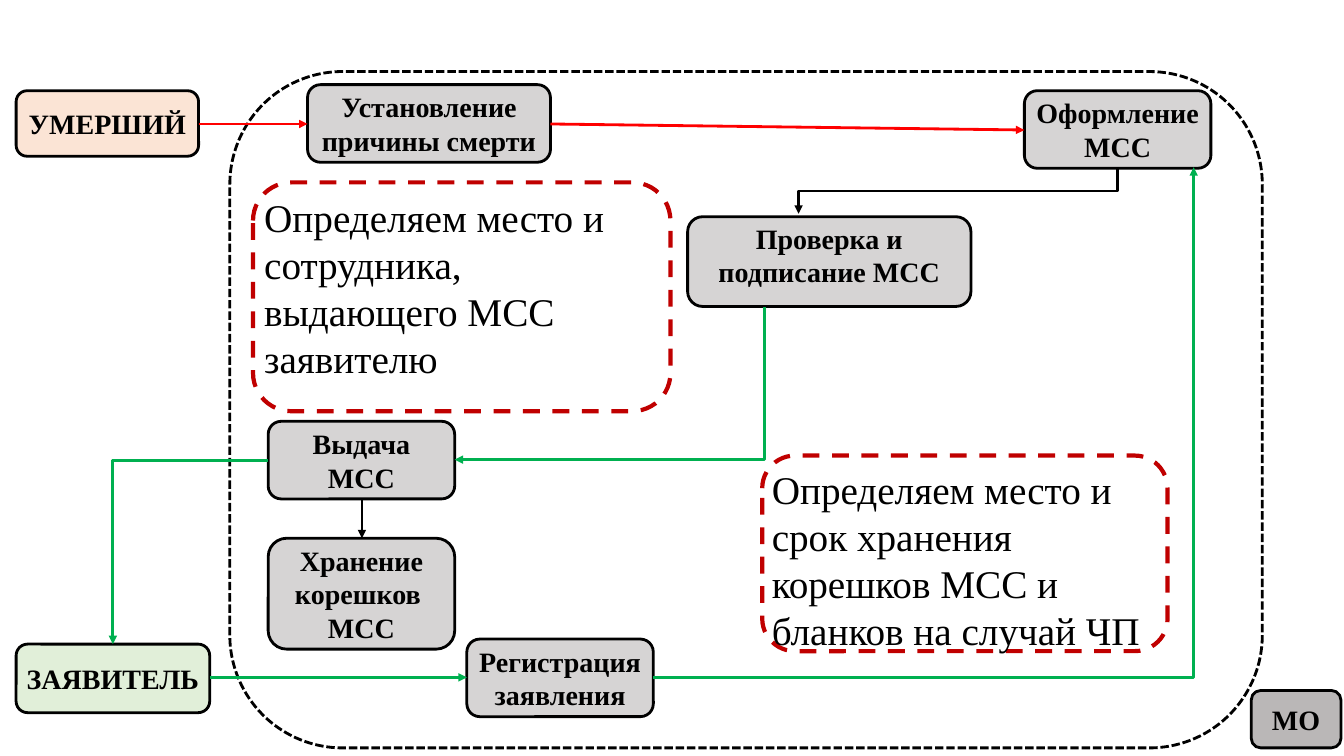
from lxml import etree
from pptx import Presentation
from pptx.dml.color import RGBColor
from pptx.enum.dml import MSO_LINE
from pptx.enum.shapes import MSO_CONNECTOR, MSO_SHAPE
from pptx.enum.text import MSO_ANCHOR, PP_ALIGN
from pptx.oxml.ns import qn
from pptx.util import Inches, Pt

BLACK = RGBColor(0x00, 0x00, 0x00)
RED = RGBColor(0xFF, 0x00, 0x00)
DARK_RED = RGBColor(0xC0, 0x00, 0x00)
GREEN = RGBColor(0x00, 0xB0, 0x50)
PEACH = RGBColor(0xF8, 0xCB, 0xAD)
LIGHT_GREEN = RGBColor(0xC5, 0xE0, 0xB4)
GRAY = RGBColor(0xAF, 0xAB, 0xAB)
DARK_GRAY = RGBColor(0x76, 0x71, 0x71)
FONT = "Times New Roman"

# box (left, top, width, height), fill, text, anchor
STEPS = [
    ((0.16, 0.9, 1.81, 0.65), PEACH, "УМЕРШИЙ", MSO_ANCHOR.MIDDLE),
    ((0.16, 6.39, 1.92, 0.68), LIGHT_GREEN, "ЗАЯВИТЕЛЬ", MSO_ANCHOR.MIDDLE),
    ((4.63, 6.34, 1.85, 0.77), GRAY, "Регистрация заявления", MSO_ANCHOR.MIDDLE),
    ((3.05, 0.84, 2.41, 0.77), GRAY, "Установление причины смерти", MSO_ANCHOR.MIDDLE),
    ((10.16, 0.9, 1.85, 0.77), GRAY, "Оформление МСС", MSO_ANCHOR.MIDDLE),
    ((6.82, 2.15, 2.81, 0.89), GRAY, "Проверка и подписание МСС", MSO_ANCHOR.TOP),
    ((2.66, 4.18, 1.85, 0.77), GRAY, "Выдача МСС", MSO_ANCHOR.MIDDLE),
    ((2.66, 5.34, 1.85, 1.1), GRAY, "Хранение корешков \nМСС", MSO_ANCHOR.MIDDLE),
    ((12.41, 6.85, 0.89, 0.57), DARK_GRAY, "МО", MSO_ANCHOR.MIDDLE),
]
NOTES = [
    ((2.51, 1.81, 4.14, 2.27), "Определяем место и сотрудника, выдающего МСС заявителю"),
    ((7.56, 4.52, 4.02, 1.94),
     "Определяем место и срок хранения корешков МСС и бланков на случай ЧП"),
]
# start, end, colour
STRAIGHT_ARROWS = [
    ((2.08, 6.72), (4.63, 6.72), GREEN),
    ((1.97, 1.23), (3.05, 1.23), RED),
    ((5.46, 1.23), (10.16, 1.29), RED),
    ((3.59, 4.95), (3.59, 5.34), BLACK),
]


def add_round_rect(s, box, color, width, dash=None):
    sp = s.shapes.add_shape(MSO_SHAPE.ROUNDED_RECTANGLE, *map(Inches, box))
    sp.shadow.inherit = False
    sp.fill.background()
    sp.line.color.rgb = color
    sp.line.width = Pt(width)
    if dash:
        sp.line.dash_style = dash
    return sp


def set_text(sp, text, size, bold=False, align=PP_ALIGN.LEFT,
             anchor=MSO_ANCHOR.TOP, left=0.0, right=0.0):
    tf = sp.text_frame
    tf.word_wrap = True
    tf.vertical_anchor = anchor
    tf.margin_left, tf.margin_right = Inches(left), Inches(right)
    tf.margin_top = tf.margin_bottom = 0
    tf.text = text
    for p in tf.paragraphs:
        p.alignment = align
        for r in p.runs:
            r.font.name = FONT
            r.font.size = Pt(size)
            r.font.bold = bold
            r.font.color.rgb = BLACK


def add_step(s, box, fill, text, anchor):
    sp = add_round_rect(s, box, BLACK, 2)
    sp.fill.solid()
    sp.fill.fore_color.rgb = fill
    clr = sp._element.spPr.find(qn("a:solidFill"))[0]
    etree.SubElement(clr, qn("a:alpha")).set("val", "50000")
    set_text(sp, text, 20, True, PP_ALIGN.CENTER, anchor, 0.06, 0.06)


def add_note(s, box, text):
    sp = add_round_rect(s, box, DARK_RED, 3, MSO_LINE.DASH)
    set_text(sp, text, 28, right=0.08)


def add_arrow(s, start, end, color, kind=MSO_CONNECTOR.STRAIGHT):
    cx = s.shapes.add_connector(kind, *map(Inches, start + end))
    cx.line.color.rgb = color
    cx.line.width = Pt(2)
    etree.SubElement(cx.line._get_or_add_ln(), qn("a:tailEnd")).set("type", "triangle")
    etree.SubElement(cx._element.spPr, qn("a:effectLst"))
    return cx


def add_elbow(s, start, end, color, bend):
    """Arrow that runs level, turns at the share bend of its width, then runs level."""
    cx = add_arrow(s, start, end, color, MSO_CONNECTOR.ELBOW)
    av = cx._element.spPr.find(qn("a:prstGeom")).get_or_add_avLst()
    gd = etree.SubElement(av, qn("a:gd"))
    gd.set("name", "adj1")
    gd.set("fmla", f"val {round(bend * 100000)}")


def add_drop_elbow(s, start, end, color):
    """Arrow that runs down, left and down: an elbow turned by 90 degrees."""
    (x1, y1), (x2, y2) = start, end
    mid_x, mid_y = (x1 + x2) / 2, (y1 + y2) / 2
    half_w, half_h = (y2 - y1) / 2, (x1 - x2) / 2
    cx = add_arrow(s, (mid_x - half_w, mid_y - half_h),
                   (mid_x + half_w, mid_y + half_h), color, MSO_CONNECTOR.ELBOW)
    cx._element.spPr.find(qn("a:xfrm")).set("rot", str(90 * 60000))


def add_flow_arrows(s):
    for start, end, color in STRAIGHT_ARROWS:
        add_arrow(s, start, end, color)
    add_elbow(s, (6.48, 6.72), (11.84, 1.66), GREEN, 1)
    add_elbow(s, (7.58, 3.05), (4.51, 4.56), GREEN, 0)
    add_elbow(s, (2.66, 4.57), (1.12, 6.39), GREEN, 1)
    add_drop_elbow(s, (11.08, 1.67), (7.92, 2.12), BLACK)


def main():
    prs = Presentation()
    prs.slide_width, prs.slide_height = Inches(13.33), Inches(7.5)
    s = prs.slides.add_slide(prs.slide_layouts[6])
    add_round_rect(s, (2.28, 0.71, 10.24, 6.71), BLACK, 2, MSO_LINE.SQUARE_DOT)
    for step in STEPS:
        add_step(s, *step)
    add_flow_arrows(s)
    for note in NOTES:
        add_note(s, *note)
    prs.save("out.pptx")


if __name__ == "__main__":
    main()
